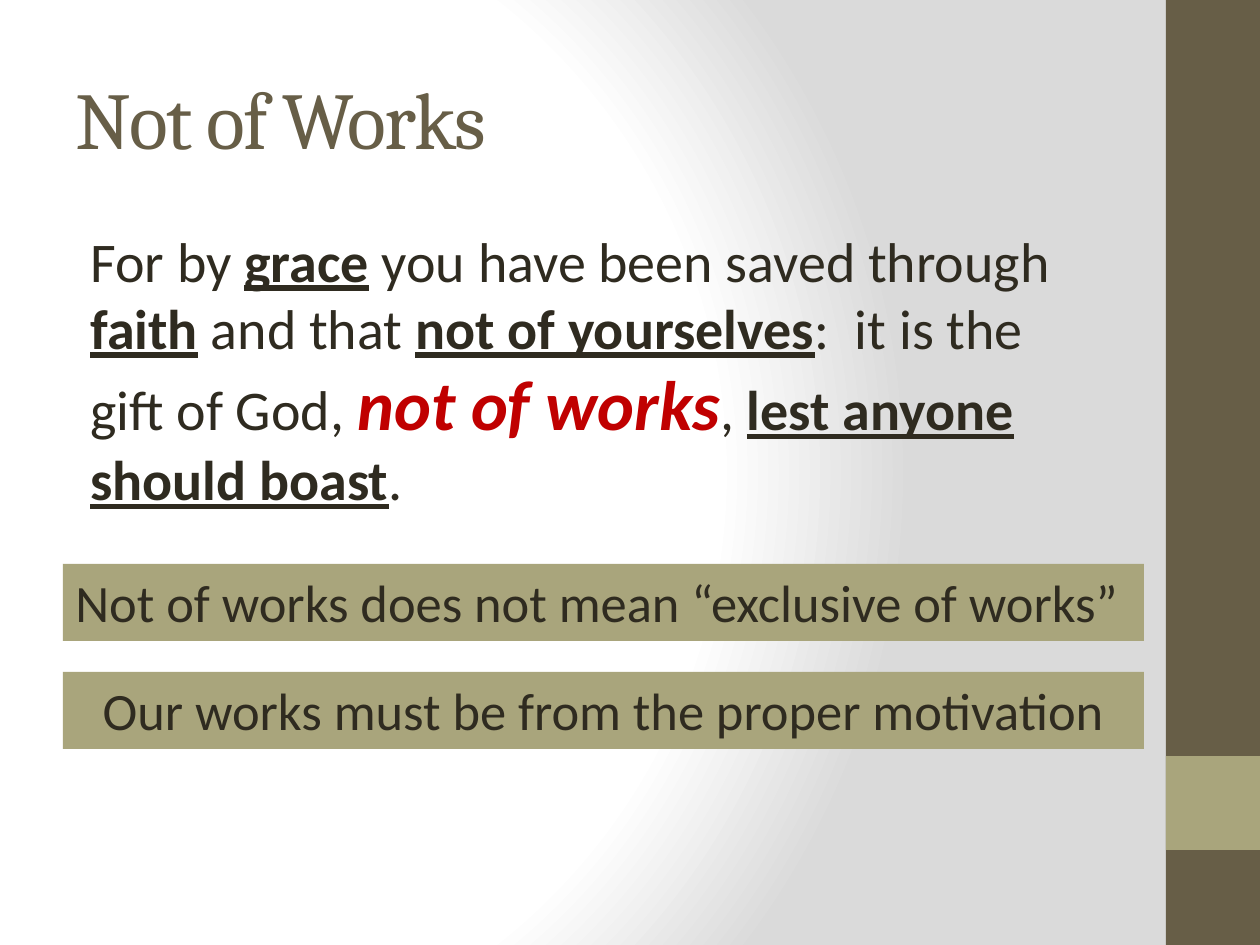
from lxml import etree
from pptx import Presentation
from pptx import util as u
from pptx.dml.color import RGBColor
from pptx.enum import shapes, text
from pptx.oxml.ns import qn

# Content
TITLE = "Not of Works"
KEY = {"bold": True, "underline": True}
WORKS = {"bold": True, "italic": True, "size": 40, "color": "C00000"}
VERSE = [
    ("For by ", {}), ("grace", KEY),
    (" you have been saved through ", {}), ("faith", KEY),
    (" and that ", {}), ("not of yourselves", KEY),
    (":  it is the gift of God, ", {}), ("not of works", WORKS),
    (", ", {}), ("lest anyone should boast", KEY), (".", {}),
]
POINTS = [
    ("Not of works does not mean “exclusive of works”", text.PP_ALIGN.LEFT),
    ("Our works must be from the proper motivation", text.PP_ALIGN.CENTER),
]

# Look and layout, in px
WIDTH, HEIGHT = 1260, 945
LEFT, TEXT_WIDTH = 63, 1050
BAND_LEFT, ACCENT_TOP, ACCENT_SIZE = 1166, 756, 94
POINT_TOP, POINT_WIDTH, POINT_HEIGHT, POINT_STEP = 564, 1081, 77, 108
BROWN, SAGE, INK = "675E47", "A9A57C", "2F2B20"
GLOW = [(0, "FFFFFF"), (75, "FFFFFF"), (100, "DADADA")]


def px(length):
    return u.Emu(round(length * 914400 / 126))


def rgb(value):
    return RGBColor.from_string(value)


def add_run(paragraph, words, size=32, color=INK, font="Calibri",
            bold=False, italic=False, underline=False, spacing=0):
    run = paragraph.add_run()
    run.text = words
    style = run.font
    style.name, style.size = font, u.Pt(size)
    style.bold, style.italic, style.underline = bold, italic, underline
    style.color.rgb = rgb(color)
    if spacing:
        run._r.get_or_add_rPr().set("spc", str(spacing * 100))


def add_bar(slide, left, top, width, height, color):
    bar = slide.shapes.add_shape(shapes.MSO_SHAPE.RECTANGLE,
                                 px(left), px(top), px(width), px(height))
    bar.shadow.inherit = False
    bar.fill.solid()
    bar.fill.fore_color.rgb = rgb(color)
    bar.line.fill.background()
    return bar


def add_text_box(slide, top, height, anchor):
    frame = slide.shapes.add_textbox(
        px(LEFT), px(top), px(TEXT_WIDTH), px(height)).text_frame
    frame.word_wrap = True
    frame.vertical_anchor = anchor
    return frame.paragraphs[0]


def set_glow(slide):
    slide.background.fill.solid()
    properties = slide.element.find(".//" + qn("p:bgPr"))
    stops = "".join(f'<a:gs pos="{at * 1000}"><a:srgbClr val="{color}"/></a:gs>'
                    for at, color in GLOW)
    gradient = etree.fromstring(
        '<a:gradFill xmlns:a="http://schemas.openxmlformats.org/drawingml/2006/main"'
        f' rotWithShape="1"><a:gsLst>{stops}</a:gsLst><a:path path="circle">'
        '<a:fillToRect l="20000" t="50000" r="100000" b="50000"/>'
        '</a:path></a:gradFill>')
    properties.replace(properties[0], gradient)


def main():
    deck = Presentation()
    deck.slide_width, deck.slide_height = px(WIDTH), px(HEIGHT)
    slide = deck.slides.add_slide(deck.slide_layouts[6])
    set_glow(slide)

    # Side band and its accent
    add_bar(slide, BAND_LEFT, 0, WIDTH - BAND_LEFT, HEIGHT, BROWN)
    add_bar(slide, BAND_LEFT, ACCENT_TOP, ACCENT_SIZE, ACCENT_SIZE, SAGE)

    # Title
    title = add_text_box(slide, 38, 158, text.MSO_ANCHOR.MIDDLE)
    add_run(title, TITLE, size=46, color=BROWN, font="Cambria", spacing=-1)

    # Verse
    verse = add_text_box(slide, 220, 347, text.MSO_ANCHOR.TOP)
    verse._p.get_or_add_pPr().set("marL", str(px(15)))
    for words, look in VERSE:
        add_run(verse, words, **look)

    # Points
    for row, (words, align) in enumerate(POINTS):
        point = add_bar(slide, LEFT, POINT_TOP + row * POINT_STEP,
                        POINT_WIDTH, POINT_HEIGHT, SAGE)
        frame = point.text_frame
        frame.word_wrap = True
        frame.vertical_anchor = text.MSO_ANCHOR.TOP
        frame.auto_size = text.MSO_AUTO_SIZE.SHAPE_TO_FIT_TEXT
        frame.paragraphs[0].alignment = align
        add_run(frame.paragraphs[0], words, size=30)

    deck.save("out.pptx")


if __name__ == "__main__":
    main()
